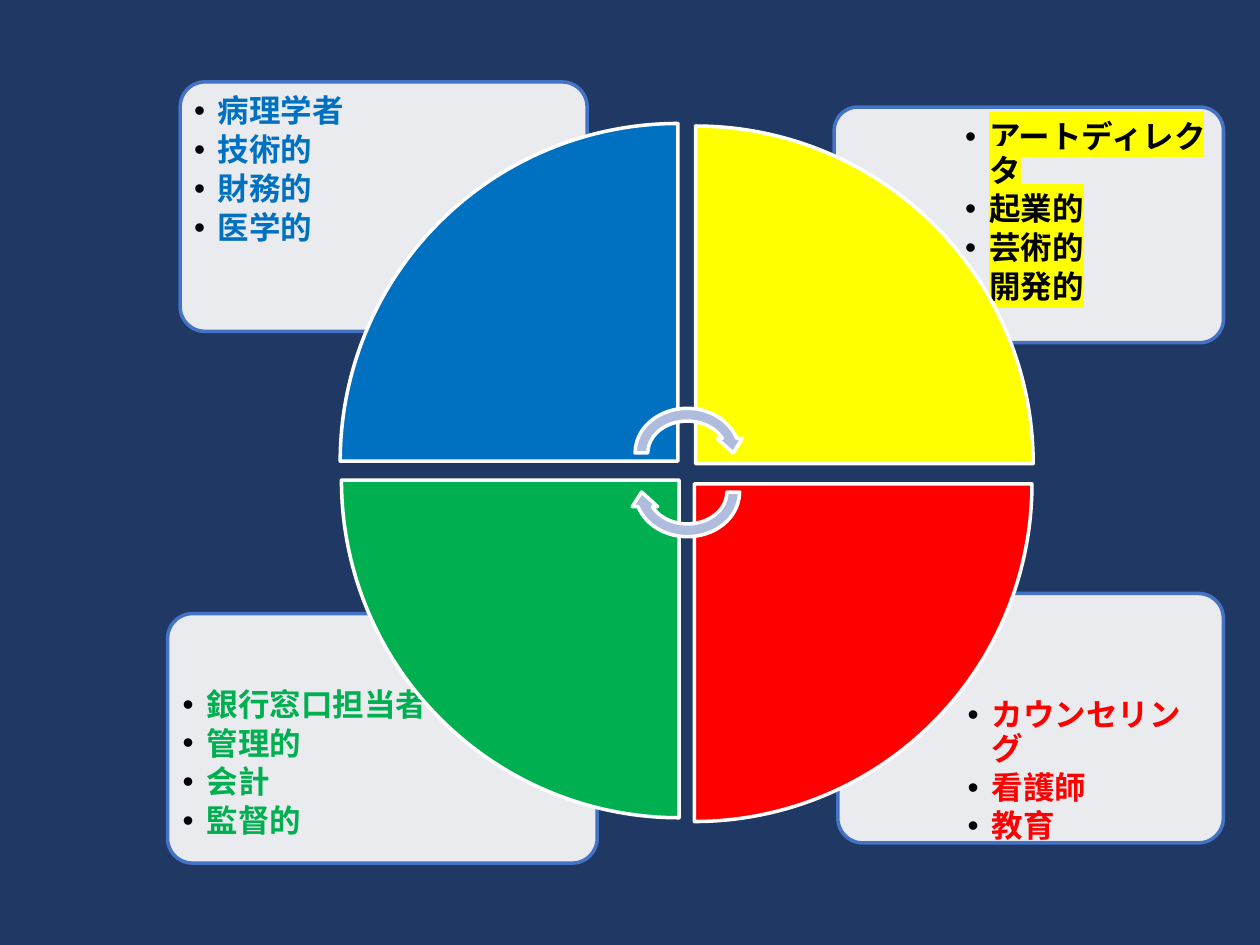
from dataclasses import dataclass

from lxml import etree
from pptx import Presentation
from pptx.dml.color import RGBColor
from pptx.enum.shapes import MSO_SHAPE
from pptx.oxml.ns import qn
from pptx.util import Inches, Pt

ROUND_RECT = MSO_SHAPE.ROUNDED_RECTANGLE
WEDGE = MSO_SHAPE.PIE_WEDGE
ARROW = MSO_SHAPE.CIRCULAR_ARROW


@dataclass(frozen=True)
class Theme:
    background: str = "203864"
    card: str = "FFFFFF"
    card_line: str = "4472C4"
    white: str = "FFFFFF"
    black: str = "000000"
    arrow: str = "B0BCDE"
    blue: str = "0070C0"
    yellow: str = "FFFF00"
    red: str = "FF0000"
    green: str = "00B050"
    font: str = "Arial"
    size: float = 18
    line_width: float = 2


THEME = Theme()
Box = tuple[float, float, float, float]


@dataclass(frozen=True)
class Card:
    frame: Box
    text_box: Box
    items: tuple[str, ...]
    color: str
    highlight: str | None = None


@dataclass(frozen=True)
class Wedge:
    left: float
    top: float
    color: str


CARDS = (
    Card((6.65, 4.71, 3.06, 1.98), (7.61, 5.48, 2.06, 1.17),
         ("カウンセリング", "看護師", "教育"), THEME.red),
    Card((1.33, 4.87, 3.41, 1.98), (1.38, 5.4, 2.3, 1.4),
         ("銀行窓口担当者", "管理的", "会計", "監督的"), THEME.green),
    Card((6.62, 0.85, 3.09, 1.87), (7.59, 0.89, 2.08, 1.32),
         ("アートディレクタ", "起業的", "芸術的", "開発的"), THEME.black, THEME.yellow),
    Card((1.43, 0.65, 3.23, 1.98), (1.47, 0.69, 2.17, 1.4),
         ("病理学者", "技術的", "財務的", "医学的"), THEME.blue),
)
# Clockwise from the upper left, each a quarter turn after the last
WEDGES = (
    Wedge(2.7, 0.98, THEME.blue),
    Wedge(5.52, 1, THEME.yellow),
    Wedge(5.51, 3.84, THEME.red),
    Wedge(2.71, 3.81, THEME.green),
)
WEDGE_SIZE = 2.68
ARROW_TOPS = (3.19, 3.5)


def add_shape(slide, kind: MSO_SHAPE, box: Box, fill: str, line: str, rotation: float = 0):
    sp = slide.shapes.add_shape(kind, *map(Inches, box))
    sp.shadow.inherit = False
    sp.rotation = rotation
    sp.fill.solid()
    sp.fill.fore_color.rgb = RGBColor.from_string(fill)
    sp.line.color.rgb = RGBColor.from_string(line)
    sp.line.width = Pt(THEME.line_width)
    return sp


def add_color(parent, tag: str, color: str):
    """Append an element such as a:buClr that holds one RGB colour."""
    el = etree.SubElement(parent, qn(tag))
    etree.SubElement(el, qn("a:srgbClr"), val=color)
    return el


def add_bullet(p) -> None:
    pPr = p._p.get_or_add_pPr()
    indent = Inches(0.19)
    pPr.set("marL", str(indent))
    pPr.set("indent", str(-indent))
    add_color(pPr, "a:buClr", THEME.black)
    etree.SubElement(pPr, qn("a:buFont"), typeface=THEME.font)
    etree.SubElement(pPr, qn("a:buChar"), char="•")


def add_item(p, text: str, card: Card) -> None:
    add_bullet(p)
    p.text = text
    p.line_spacing = 0.9
    p.space_after = Pt(THEME.size * 0.15)
    r = p.runs[0]
    r.font.size = Pt(THEME.size)
    r.font.bold = True
    r.font.color.rgb = RGBColor.from_string(card.color)
    if card.highlight:
        add_color(r.font._element, "a:highlight", card.highlight)
    r.font.name = THEME.font


def add_card(slide, card: Card) -> None:
    sp = add_shape(slide, ROUND_RECT, card.frame, THEME.card, THEME.card_line)
    sp.adjustments[0] = 0.1
    color = sp.fill._xPr.find(qn("a:solidFill"))[0]
    etree.SubElement(color, qn("a:alpha"), val="90000")

    tf = slide.shapes.add_textbox(*map(Inches, card.text_box)).text_frame
    tf.word_wrap = True
    tf.margin_left = tf.margin_right = tf.margin_top = tf.margin_bottom = Inches(0.07)
    for i, text in enumerate(card.items):
        add_item(tf.add_paragraph() if i else tf.paragraphs[0], text, card)


def main() -> None:
    prs = Presentation()
    prs.slide_width, prs.slide_height = Inches(10), Inches(7.5)
    slide = prs.slides.add_slide(prs.slide_layouts[6])
    slide.background.fill.solid()
    slide.background.fill.fore_color.rgb = RGBColor.from_string(THEME.background)

    for card in CARDS:
        add_card(slide, card)
    for i, wedge in enumerate(WEDGES):
        box = (wedge.left, wedge.top, WEDGE_SIZE, WEDGE_SIZE)
        add_shape(slide, WEDGE, box, wedge.color, THEME.white, 90 * i)
    for i, top in enumerate(ARROW_TOPS):
        add_shape(slide, ARROW, (4.99, top, 0.93, 0.81), THEME.arrow, THEME.white, 180 * i)

    prs.save("out.pptx")


if __name__ == "__main__":
    main()
